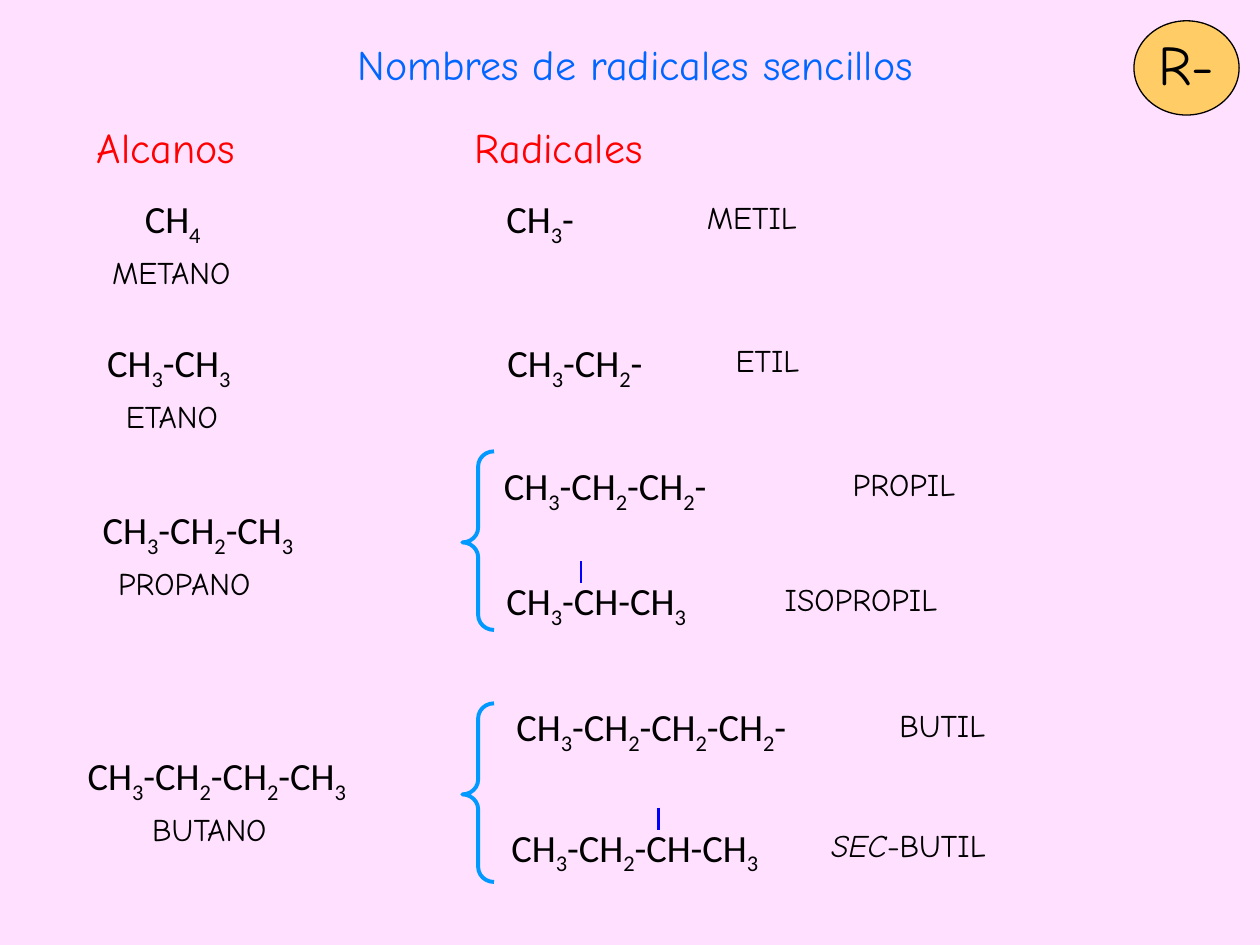
import itertools

import pptx
import pptx.dml.color
import pptx.enum.shapes
import pptx.enum.text
import pptx.oxml.ns
import pptx.util
from lxml import etree

Cm, Pt = pptx.util.Cm, pptx.util.Pt
SHAPE = pptx.enum.shapes.MSO_SHAPE
ALIGN = pptx.enum.text.PP_ALIGN
ANCHOR = pptx.enum.text.MSO_ANCHOR
AUTO_SIZE = pptx.enum.text.MSO_AUTO_SIZE

COLORS = {
    "background": "FFE1FF", "title": "0066FF", "heading": "FF0000",
    "text": "000000", "badge": "FFCC66", "bond": "0000FF", "brace": "0099FF",
}
HEADING_FONT = {"name": "Comic Neue", "size": Pt(24), "bold": False}
BADGE_FONT = {"name": "Comic Neue", "size": Pt(32)}
NAME_FONT = {"name": "Comic Neue", "size": Pt(18)}
FORMULA_FONT = {"name": "Calibri", "size": Pt(22)}

# formula, left, top, width, alignment, name, name left, name width (cm)
ALKANES = [
    ("CH4", 2.67, 3.81, 1.93, ALIGN.LEFT, "METANO", 2.01, 3.4),
    ("CH3-CH3", 1.91, 6.71, 3.61, ALIGN.LEFT, "ETANO", 2.29, 2.84),
    ("CH3-CH2-CH3", 1.35, 10.08, 5.28, ALIGN.CENTER, "PROPANO", 2.13, 3.58),
    ("CH3-CH2-CH2-CH3", 0.89, 15.04, 6.96, ALIGN.CENTER, "BUTANO", 2.82, 3.3),
]
# formula, left, top, width, name, name left, name width, free bond x (cm)
RADICALS = [
    ("CH3-", 9.96, 3.81, 2.18, "METIL", 14, 3, None),
    ("CH3-CH2-", 9.98, 6.71, 3.86, "ETIL", 14.58, 2.44, None),
    ("CH3-CH2-CH2-", 9.91, 9.19, 5.54, "PROPIL", 16.94, 3.18, None),
    ("CH3-CH-CH3", 9.96, 11.51, 4.98, "ISOPROPIL", 15.57, 4.5, 11.71),
    ("CH3-CH2-CH2-CH2-", 10.16, 14.05, 7.21, "BUTIL", 17.88, 2.92, None),
    ("CH3-CH2-CH-CH3", 10.06, 16.48, 6.65, "SEC-BUTIL", 16.51, 4.42, 13.28),
]


def rgb(color):
    return pptx.dml.color.RGBColor.from_string(COLORS[color])


def add_run(paragraph, text, font, color="text"):
    run = paragraph.add_run()
    run.text = text
    for attribute, value in font.items():
        setattr(run.font, attribute, value)
    run.font.color.rgb = rgb(color)
    return run


def fill_placeholder(placeholder, text, color, align, left, top, width, height):
    place = {"left": left, "top": top, "width": width, "height": height}
    for attribute, value in place.items():
        setattr(placeholder, attribute, Cm(value))
    frame = placeholder.text_frame
    frame.auto_size = AUTO_SIZE.NONE
    frame.vertical_anchor = ANCHOR.MIDDLE
    paragraph = frame.paragraphs[0]
    paragraph.alignment = align
    paragraph.space_before = Pt(0)
    add_run(paragraph, text, HEADING_FONT, color)


def add_label(slide, left, top, width, height, align=ALIGN.LEFT):
    label = slide.shapes.add_textbox(Cm(left), Cm(top), Cm(width), Cm(height))
    label.text_frame.word_wrap = False
    label.text_frame.auto_size = AUTO_SIZE.SHAPE_TO_FIT_TEXT
    paragraph = label.text_frame.paragraphs[0]
    paragraph.alignment = align
    return paragraph


def add_formula(slide, formula, left, top, width, align=ALIGN.LEFT):
    paragraph = add_label(slide, left, top, width, 1.19, align)
    for is_count, symbols in itertools.groupby(formula, str.isdigit):
        run = add_run(paragraph, "".join(symbols), FORMULA_FONT)
        if is_count:
            run._r.get_or_add_rPr().set("baseline", "-25000")


def add_name(slide, name, left, top, width):
    paragraph = add_label(slide, left, top, width, 1.02)
    prefix, hyphen, stem = name.rpartition("-")
    if prefix:
        add_run(paragraph, prefix, {**NAME_FONT, "italic": True})
    add_run(paragraph, hyphen + stem, NAME_FONT)


def add_bond(slide, x, top):
    bond = slide.shapes.add_connector(
        pptx.enum.shapes.MSO_CONNECTOR.STRAIGHT,
        Cm(x), Cm(top), Cm(x), Cm(top + 0.45))
    bond.line.color.rgb = rgb("bond")
    bond.line.width = Pt(1.5)
    etree.SubElement(bond._element.spPr, pptx.oxml.ns.qn("a:effectLst"))


def add_brace(slide, top):
    brace = slide.shapes.add_shape(
        SHAPE.LEFT_BRACE, Cm(9.32), Cm(top), Cm(0.64), Cm(3.6))
    brace.shadow.inherit = False
    brace.fill.background()
    brace.line.color.rgb = rgb("brace")
    brace.line.width = Pt(2.25)
    brace.adjustments[0] = 0.47
    brace.adjustments[1] = 0.51


def add_badge(slide, text):
    disc = slide.shapes.add_shape(
        SHAPE.OVAL, Cm(22.86), Cm(0.42), Cm(2.12), Cm(1.9))
    disc.shadow.inherit = False
    disc.fill.solid()
    disc.fill.fore_color.rgb = rgb("badge")
    disc.line.color.rgb = rgb("text")
    disc.line.width = Pt(0.75)
    caption = slide.shapes.add_textbox(Cm(22.86), Cm(0.64), Cm(2.12), Cm(1.27))
    caption.text_frame.word_wrap = True
    caption.text_frame.vertical_anchor = ANCHOR.MIDDLE
    caption.text_frame.paragraphs[0].alignment = ALIGN.CENTER
    add_run(caption.text_frame.paragraphs[0], text, BADGE_FONT)


def main():
    deck = pptx.Presentation()
    deck.slide_width, deck.slide_height = Cm(25.4), Cm(19.05)
    slide = deck.slides.add_slide(
        deck.slide_layouts.get_by_name("Comparison"))
    slide.background.fill.solid()
    slide.background.fill.fore_color.rgb = rgb("background")

    # Title and column headings
    title, alkanes, alkane_list, radicals, radical_list = list(
        slide.placeholders)[:5]
    fill_placeholder(title, "Nombres de radicales sencillos", "title",
                     ALIGN.CENTER, 0.2, 0.64, 25.2, 1.27)
    fill_placeholder(alkanes, "Alcanos", "heading",
                     ALIGN.LEFT, 1.7, 2.33, 3.81, 1.27)
    fill_placeholder(radicals, "Radicales", "heading",
                     ALIGN.LEFT, 9.32, 2.33, 4.66, 1.27)
    for unused in (alkane_list, radical_list):
        unused._element.getparent().remove(unused._element)
    add_badge(slide, "R-")

    # Alkanes, each with its name below
    for formula, left, top, width, align, name, name_left, name_width in ALKANES:
        add_formula(slide, formula, left, top, width, align)
        add_name(slide, name, name_left, top + 1.17, name_width)

    # Radicals, each with its name at the right
    for formula, left, top, width, name, name_left, name_width, bond_x in RADICALS:
        add_formula(slide, formula, left, top, width)
        add_name(slide, name, name_left, top + 0.05, name_width)
        if bond_x:
            add_bond(slide, bond_x, top - 0.2)

    # Braces around the isomers of propyl and butyl
    for top in (9.1, 14.18):
        add_brace(slide, top)

    deck.save("out.pptx")


if __name__ == "__main__":
    main()
